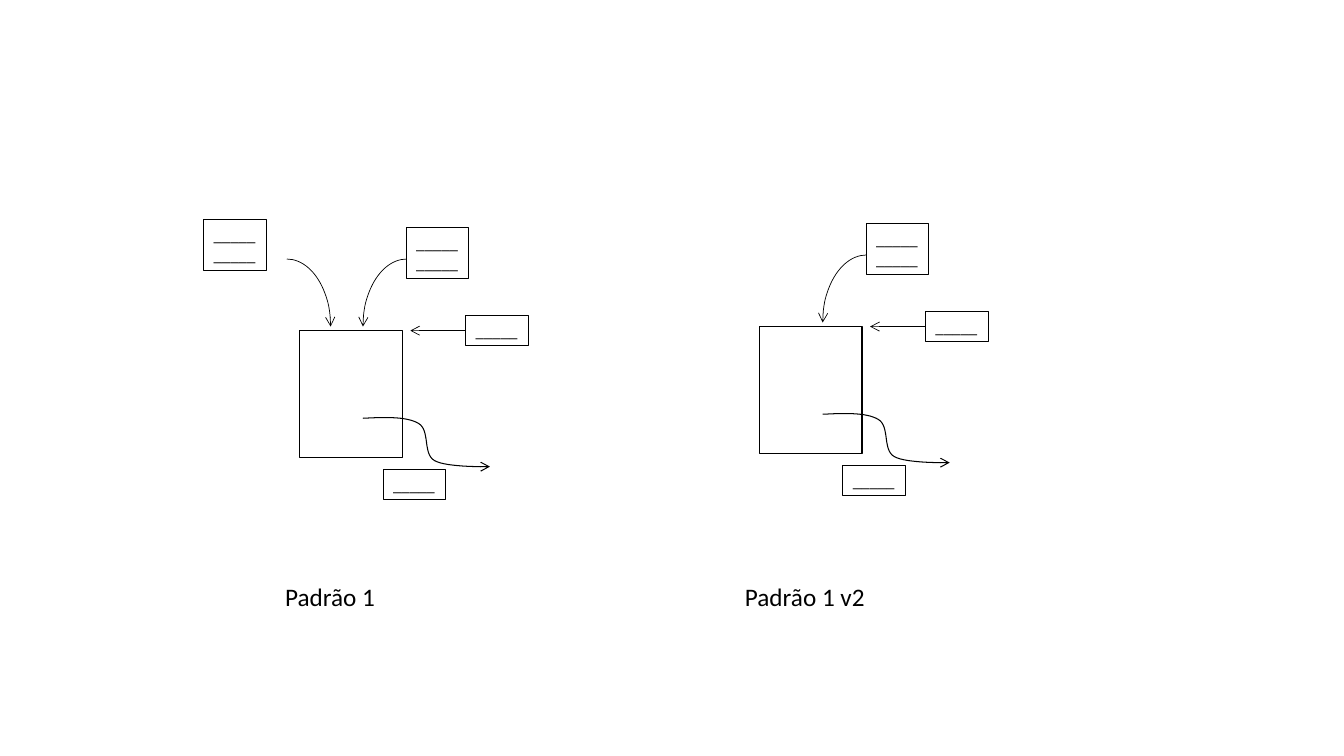
from dataclasses import dataclass

from lxml.etree import SubElement
from pptx import Presentation
from pptx.dml.color import RGBColor
from pptx.enum.shapes import MSO_CONNECTOR as Link, MSO_SHAPE as Preset
from pptx.enum.text import MSO_AUTO_SIZE as Fit
from pptx.oxml.ns import qn
from pptx.util import Inches, Pt

Point = tuple[float, float]


@dataclass(frozen=True)
class Theme:
    ink: RGBColor = RGBColor(0, 0, 0)
    font: str = "Calibri"
    title: float = 18
    note: float = 12
    hair: float = 0.5
    thin: float = 0.75
    bold: float = 1


@dataclass(frozen=True)
class Note:
    """A small box of blank lines, placed relative to its frame."""
    x: float
    y: float
    rows: int = 1


@dataclass(frozen=True)
class Arc:
    x: float
    flip: bool


@dataclass(frozen=True)
class Pattern:
    name: str
    x: float
    y: float
    width: float
    arcs: tuple[Arc, ...]
    notes: tuple[Note, ...]


THEME = Theme()
BLANK = "_____"
LEFT, RIGHT = Arc(-0.56, False), Arc(0.63, True)
SHARED = (Note(1.06, -1.02, 2), Note(1.65, -0.15), Note(0.83, 1.38))
PATTERNS = (
    Pattern("Padrão 1", 2.97, 3.28, 1.16, (LEFT, RIGHT),
            (Note(-0.95, -1.10, 2), *SHARED)),
    Pattern("Padrão 1 v2", 7.53, 3.24, 1.46, (RIGHT,), SHARED),
)
# Start point, then two handles and an end point for each bend.
WAVE: tuple[Point, ...] = (
    (0.63, 0.87),
    (0.84, 0.86), (1.06, 0.85), (1.18, 0.92),
    (1.30, 0.99), (1.22, 1.22), (1.34, 1.29),
    (1.46, 1.36), (1.89, 1.35), (1.89, 1.35),
)


def bend(pts: tuple[Point, ...], steps: int = 16) -> list[Point]:
    """Sample a chain of cubic curves."""
    out = [pts[0]]
    for i in range(0, len(pts) - 1, 3):
        for n in range(1, steps + 1):
            t = n / steps
            u = 1 - t
            mix = (u ** 3, 3 * u * u * t, 3 * u * t * t, t ** 3)
            x, y = (sum(m * p[k] for m, p in zip(mix, pts[i:i + 4]))
                    for k in (0, 1))
            out.append((x, y))
    return out


def stroke(item, width: float, arrow: bool = False) -> None:
    """Leave only a plain outline, with an arrowhead at its end if asked."""
    if hasattr(item, "fill"):
        item.fill.background()
        item.shadow.inherit = False
    else:
        SubElement(item._element.spPr, qn("a:effectLst"))
    item.line.color.rgb = THEME.ink
    item.line.width = Pt(width)
    if arrow:
        ln = item._element.spPr.find(qn("a:ln"))
        SubElement(ln, qn("a:tailEnd"), type="arrow")


def write(shapes, text: str, x: float, y: float, w: float, h: float, *,
          size: float, line: float = 0) -> None:
    box = shapes.add_textbox(Inches(x), Inches(y), Inches(w), Inches(h))
    if line:
        stroke(box, line)
    frame = box.text_frame
    frame.word_wrap = False
    frame.auto_size = Fit.SHAPE_TO_FIT_TEXT
    frame.text = text
    for para in frame.paragraphs:
        for run in para.runs:
            run.font.name = THEME.font
            run.font.size = Pt(size)
            run.font.color.rgb = THEME.ink


def draw(slide, pat: Pattern) -> None:
    write(slide.shapes, pat.name, pat.x - 0.24, 5.72, pat.width, 0.4,
          size=THEME.title)
    shapes = slide.shapes.add_group_shape().shapes

    def spot(x: float, y: float) -> tuple[int, int]:
        return Inches(pat.x + x), Inches(pat.y + y)

    page = shapes.add_shape(Preset.RECTANGLE, *spot(0, 0),
                            Inches(1.02), Inches(1.26))
    stroke(page, THEME.bold)

    entry = shapes.add_connector(Link.STRAIGHT, *spot(1.65, 0), *spot(1.1, 0))
    stroke(entry, THEME.hair, arrow=True)

    for arc in pat.arcs:
        curve = shapes.add_shape(Preset.ARC, *spot(arc.x, -0.71),
                                 Inches(0.87), Inches(1.34))
        stroke(curve, THEME.hair, arrow=True)
        if arc.flip:
            curve._element.spPr.find(qn("a:xfrm")).set("flipH", "1")

    start, *rest = [spot(x, y) for x, y in bend(WAVE)]
    build = shapes.build_freeform(*start)
    build.add_line_segments(rest, close=False)
    stroke(build.convert_to_shape(), THEME.thin, arrow=True)

    for note in pat.notes:
        write(shapes, "\n".join([BLANK] * note.rows),
              pat.x + note.x, pat.y + note.y, 0.62, 0.1 + 0.2 * note.rows,
              size=THEME.note, line=THEME.thin)


def main() -> None:
    deck = Presentation()
    deck.slide_width, deck.slide_height = Inches(13.33), Inches(7.5)
    slide = deck.slides.add_slide(deck.slide_layouts[6])
    for pat in PATTERNS:
        draw(slide, pat)
    deck.save("out.pptx")


if __name__ == "__main__":
    main()
